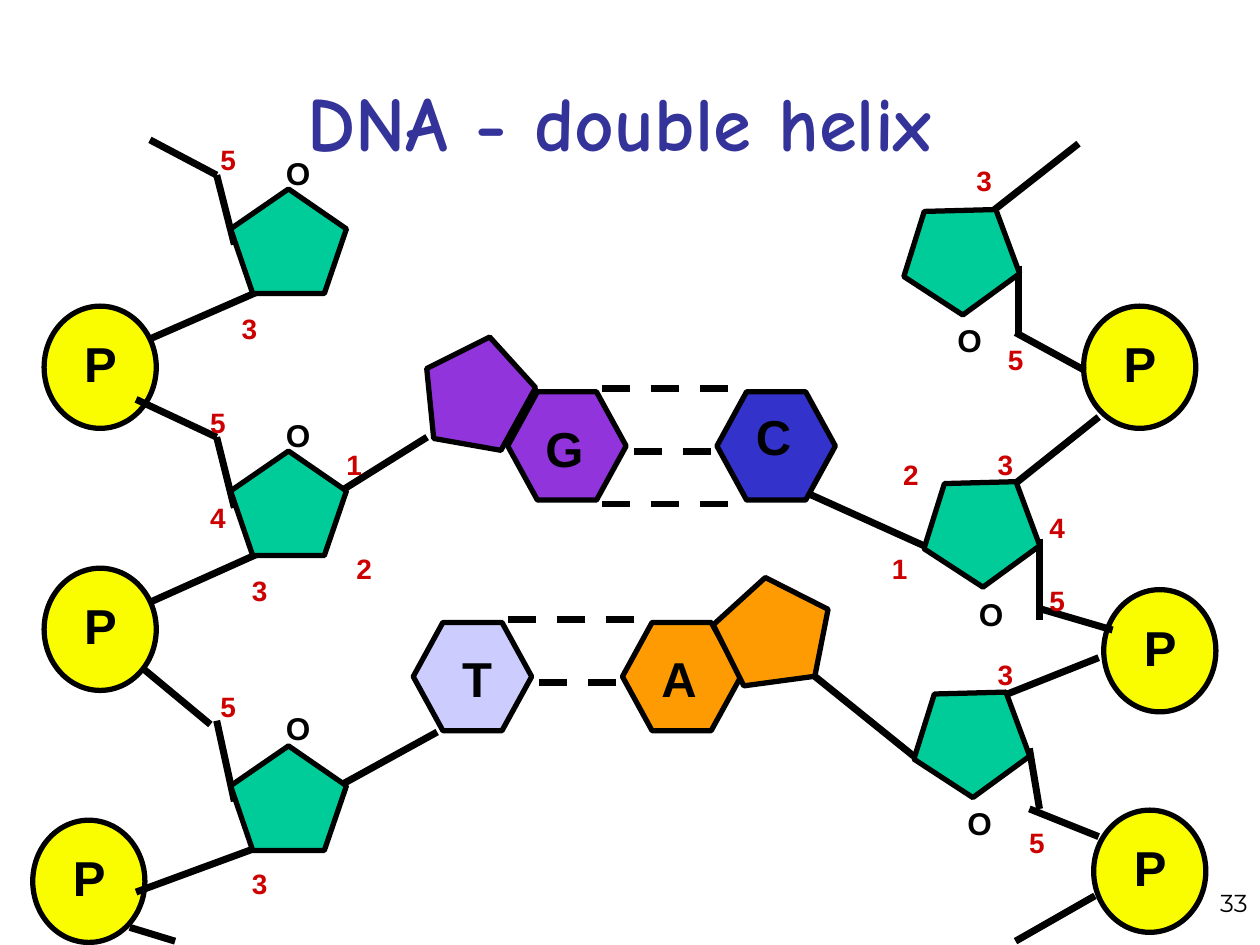
"""Build the DNA double helix slide."""
from pptx import Presentation
from pptx.dml.color import RGBColor
from pptx.enum.dml import MSO_LINE
from pptx.enum.shapes import MSO_CONNECTOR as Connector, MSO_SHAPE as Shape
from pptx.enum.text import MSO_ANCHOR as Anchor, MSO_AUTO_SIZE as AutoSize, PP_ALIGN as Align
from pptx.oxml.ns import qn
from pptx.util import Inches, Pt
from lxml.etree import SubElement

BLACK = RGBColor(0x00, 0x00, 0x00)
RED = RGBColor(0xCC, 0x00, 0x00)
NAVY = RGBColor(0x33, 0x33, 0x99)
YELLOW = RGBColor(0xFA, 0xFD, 0x00)
GREEN = RGBColor(0x00, 0xCC, 0x99)
PURPLE = RGBColor(0x92, 0x34, 0xDB)
BLUE = RGBColor(0x33, 0x33, 0xCC)
ORANGE = RGBColor(0xFE, 0x9B, 0x03)
LILAC = RGBColor(0xCC, 0xCC, 0xFF)

PHOSPHATE = (0.89, 0.97)
RING = (0.92, 0.83)
HEXAGON = (0.94, 0.86)

LEFT_STRAND = {
    "base_bonds": [(2.67, 3.92, 3.39, 3.47), (2.67, 6.25, 3.47, 5.81)],
    "phosphates": [(0.35, 4.51), (0.26, 6.51), (0.35, 2.43)],
    "bonds": [
        (1.08, 3.17, 1.72, 3.47), (1.86, 4.03, 1.72, 3.47), (1.86, 6.36, 1.72, 5.72),
        (1.67, 5.75, 1.14, 5.31), (1.19, 4.78, 2.06, 4.39), (1.08, 7.08, 2.06, 6.72),
        (1.03, 7.36, 1.39, 7.47), (1.19, 2.69, 2.06, 2.31), (1.86, 1.94, 1.72, 1.39),
        (1.19, 1.11, 1.72, 1.39),
    ],
    "oxygens": [(2.17, 1.17), (2.17, 3.25), (2.17, 5.58)],
    "carbons": [
        ("1", 2.65, 3.5), ("2", 2.73, 4.33), ("3", 1.9, 4.5), ("4", 1.57, 3.92),
        ("5", 1.57, 3.17), ("5", 1.65, 5.42), ("3", 1.9, 6.83), ("3", 1.82, 2.42),
        ("5", 1.65, 1.08),
    ],
    "sugars": [(1.83, 5.92), (1.83, 3.58), (1.83, 1.5)],
    "rotation": 0,
}
RIGHT_STRAND = {
    "base_bonds": [(6.42, 3.92, 7.33, 4.33), (6.42, 5.33, 7.25, 6)],
    "phosphates": [(8.68, 6.43), (8.76, 4.68), (8.6, 2.43)],
    "bonds": [
        (8.17, 5.94, 8.25, 6.42), (8.25, 4.28, 8.25, 4.92), (8.17, 6.42, 8.72, 6.64),
        (8.25, 4.83, 8.83, 5), (8.03, 3.86, 8.72, 3.31), (7.94, 5.53, 8.72, 5.22),
        (8.69, 7.11, 8.06, 7.47), (8.61, 2.94, 8.06, 2.64), (8.08, 2.11, 8.08, 2.64),
        (7.86, 1.69, 8.56, 1.14),
    ],
    "oxygens": [(7.58, 6.33), (7.67, 4.67), (7.5, 2.5)],
    "carbons": [
        ("1", 6.98, 4.33), ("2", 7.07, 3.58), ("3", 7.82, 3.5), ("4", 8.23, 4),
        ("5", 8.23, 4.58), ("5", 8.07, 6.5), ("3", 7.82, 5.17), ("5", 7.9, 2.67),
        ("3", 7.65, 1.25),
    ],
    "sugars": [(7.25, 5.5), (7.33, 3.83), (7.17, 1.67)],
    "rotation": 178.5,
}
GC_PAIR = {
    "hexagons": [(4.03, 3.11, PURPLE), (5.69, 3.11, BLUE)],
    "hydrogen_bonds": [(4.78, 3.08, 5.89, 3.08), (5.03, 3.58, 5.64, 3.58), (4.78, 4, 5.89, 4)],
    "letters": [("G", 4.23, 3.27, 0.5), ("C", 5.9, 3.18, 0.48)],
    "ring": (3.29, 2.71, PURPLE, 298.9),
}
TA_PAIR = {
    "hexagons": [(4.94, 4.94, ORANGE), (3.28, 4.94, LILAC)],
    "hydrogen_bonds": [(4.28, 5.42, 4.97, 5.42), (4.03, 4.92, 5.14, 4.92)],
    "letters": [("T", 3.57, 5.1, 0.44), ("A", 5.15, 5.1, 0.48)],
    "ring": (5.67, 4.58, ORANGE, 352.3),
}


def style_text(para, size, color, font="Arial", bold=True):
    """Format every run of a paragraph."""
    for span in para.runs:
        span.font.name = font
        span.font.size = Pt(size)
        span.font.bold = bold
        span.font.color.rgb = color


def add_label(group, text, left, top, width, height, size, color=BLACK):
    """Add a short unwrapped label."""
    box = group.shapes.add_textbox(Inches(left), Inches(top), Inches(width), Inches(height))
    frame = box.text_frame
    frame.word_wrap = False
    frame.auto_size = AutoSize.SHAPE_TO_FIT_TEXT
    frame.text = text
    style_text(frame.paragraphs[0], size, color)


def add_bond(group, start_x, start_y, end_x, end_y, dashed=False):
    """Add a straight bond, dashed for a hydrogen bond."""
    bond = group.shapes.add_connector(
        Connector.STRAIGHT, Inches(start_x), Inches(start_y), Inches(end_x), Inches(end_y))
    bond.line.color.rgb = BLACK
    bond.line.width = Pt(4)
    if dashed:
        bond.line.dash_style = MSO_LINE.DASH
    SubElement(bond._element.spPr, qn("a:effectLst"))


def add_molecule(group, kind, left, top, size, color, rotation=0):
    """Add a filled and outlined molecule part."""
    width, height = size
    shape = group.shapes.add_shape(kind, Inches(left), Inches(top), Inches(width), Inches(height))
    shape.shadow.inherit = False
    shape.rotation = rotation
    shape.fill.solid()
    shape.fill.fore_color.rgb = color
    shape.line.color.rgb = BLACK
    shape.line.width = Pt(3)
    return shape


def add_strand(page, strand):
    """Add one sugar-phosphate backbone as a group."""
    group = page.shapes.add_group_shape()
    for ends in strand["base_bonds"]:
        add_bond(group, *ends)
    for left, top in strand["phosphates"]:
        add_molecule(group, Shape.OVAL, left, top, PHOSPHATE, YELLOW)
        add_label(group, "P", left + 0.22, top + 0.17, 0.46, 0.56, 28)
    for ends in strand["bonds"]:
        add_bond(group, *ends)
    for left, top in strand["oxygens"]:
        add_label(group, "O", left, top, 0.39, 0.4, 18)
    for number, left, top in strand["carbons"]:
        add_label(group, number, left, top, 0.32, 0.36, 16, RED)
    for left, top in strand["sugars"]:
        add_molecule(group, Shape.REGULAR_PENTAGON, left, top, RING, GREEN, strand["rotation"])


def add_base_pair(page, pair):
    """Add two bases and their hydrogen bonds as a group."""
    group = page.shapes.add_group_shape()
    for left, top, color in pair["hexagons"]:
        hexagon = add_molecule(group, Shape.HEXAGON, left, top, HEXAGON, color)
        hexagon.adjustments[0] = 0.274
    for ends in pair["hydrogen_bonds"]:
        add_bond(group, *ends, dashed=True)
    for letter, left, top, width in pair["letters"]:
        add_label(group, letter, left, top, width, 0.56, 28)
    left, top, color, rotation = pair["ring"]
    add_molecule(group, Shape.REGULAR_PENTAGON, left, top, RING, color, rotation)


def add_page_number(page, number):
    """Add the page number in the bottom right corner."""
    box = page.shapes.add_textbox(Inches(7.92), Inches(7), Inches(2.08), Inches(0.5))
    box.text_frame.word_wrap = True
    box.text_frame.text = number
    para = box.text_frame.paragraphs[0]
    para.alignment = Align.RIGHT
    style_text(para, 14, BLACK, "Montserrat", False)


def set_title(page, text):
    """Place and format the title."""
    title = page.shapes.title
    title.left, title.top = Inches(0.67), Inches(0.33)
    title.width, title.height = Inches(8.5), Inches(1.25)
    frame = title.text_frame
    frame.text = text
    frame.vertical_anchor = Anchor.MIDDLE
    para = frame.paragraphs[0]
    para.alignment = Align.CENTER
    style_text(para, 44, NAVY, "Comic Neue")


def main():
    """Build and save the deck."""
    deck = Presentation()
    deck.slide_width, deck.slide_height = Inches(10), Inches(7.5)
    page = deck.slides.add_slide(deck.slide_layouts[5])
    add_page_number(page, "33")
    set_title(page, "DNA - double helix")
    for strand in (LEFT_STRAND, RIGHT_STRAND):
        add_strand(page, strand)
    for pair in (GC_PAIR, TA_PAIR):
        add_base_pair(page, pair)
    deck.save("out.pptx")


if __name__ == "__main__":
    main()
